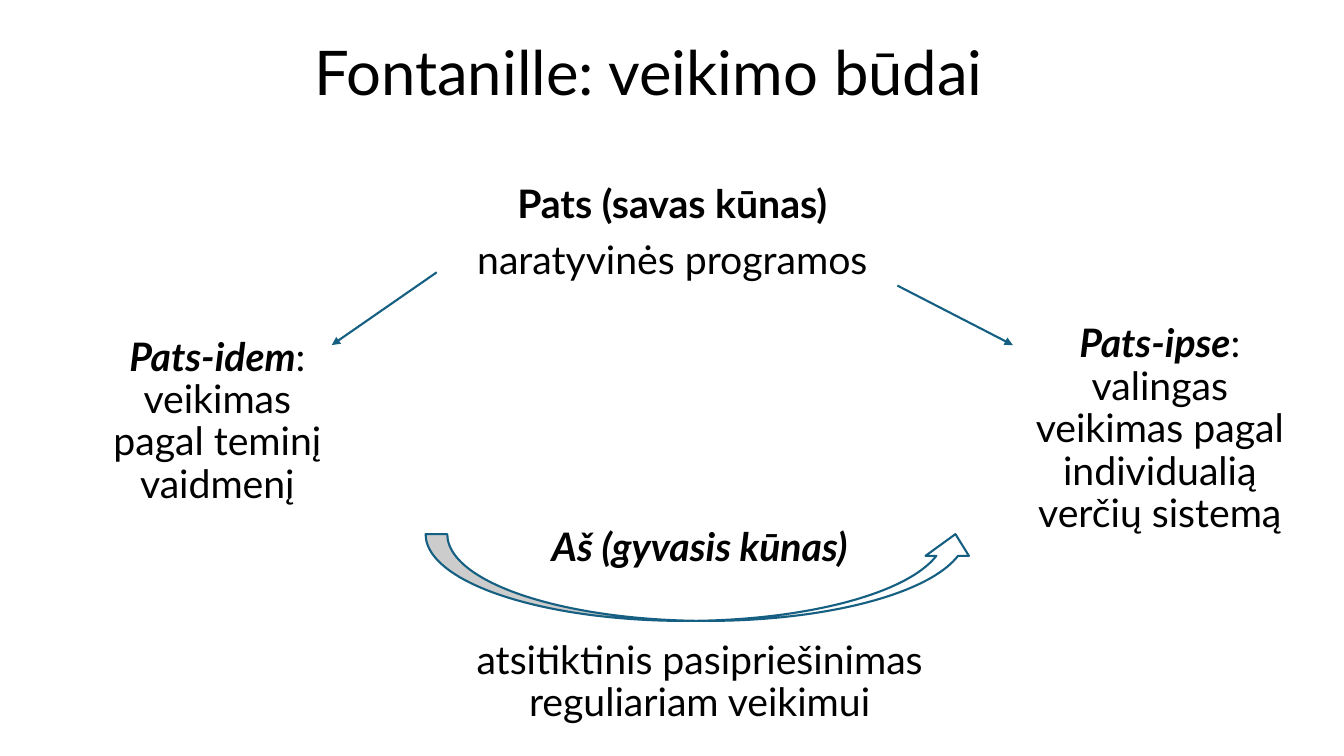
from lxml.etree import SubElement
from pptx import Presentation
from pptx.dml.color import RGBColor
from pptx.enum.shapes import MSO_CONNECTOR, MSO_SHAPE
from pptx.enum.text import MSO_ANCHOR, PP_ALIGN
from pptx.oxml.ns import qn
from pptx.util import Pt

BLACK = RGBColor(0x00, 0x00, 0x00)
WHITE = RGBColor(0xFF, 0xFF, 0xFF)
TEAL = RGBColor(0x15, 0x60, 0x82)
FONT = "Lato"
LINE_WIDTH = Pt(1.5)


def add_text_box(s, x, y, w, h, anchor=MSO_ANCHOR.TOP):
    tf = s.shapes.add_textbox(Pt(x), Pt(y), Pt(w), Pt(h)).text_frame
    tf.word_wrap = True
    tf.vertical_anchor = anchor
    return tf


def style_paragraph(p, size=28, before=10):
    p.alignment = PP_ALIGN.CENTER
    p.line_spacing = 0.9
    p.space_before = Pt(before)
    p.font.name = FONT
    p.font.size = Pt(size)
    p.font.color.rgb = BLACK


def add_title(s, text):
    tf = add_text_box(s, 49.5, 2, 828, 104.5, MSO_ANCHOR.MIDDLE)
    p = tf.paragraphs[0]
    p.text = text
    style_paragraph(p, size=44, before=0)


def add_heading_with_note(s, x, y, w, h, heading, note, italic=False, gap=10):
    tf = add_text_box(s, x, y, w, h)
    p = tf.paragraphs[0]
    p.text = heading
    style_paragraph(p)
    p.font.bold = True
    p.font.italic = italic
    p = tf.add_paragraph()
    p.text = note
    style_paragraph(p, before=gap)


def add_mode(s, x, y, w, h, term, description):
    p = add_text_box(s, x, y, w, h).paragraphs[0]
    style_paragraph(p)
    r = p.add_run()
    r.text = term
    r.font.bold = True
    r.font.italic = True
    p.add_run().text = f": {description}"


def add_arrow(s, x1, y1, x2, y2):
    c = s.shapes.add_connector(MSO_CONNECTOR.STRAIGHT, Pt(x1), Pt(y1), Pt(x2), Pt(y2))
    c.line.color.rgb = TEAL
    c.line.width = LINE_WIDTH
    SubElement(c.line._get_or_add_ln(), qn("a:tailEnd"), type="triangle")
    SubElement(c._element.spPr, qn("a:effectLst"))


def add_curved_arrow(s, x, y, w, h):
    sp = s.shapes.add_shape(MSO_SHAPE.CURVED_RIGHT_ARROW, Pt(x), Pt(y), Pt(w), Pt(h))
    sp.rotation = 270
    sp.shadow.inherit = False
    sp.fill.solid()
    sp.fill.fore_color.rgb = WHITE
    sp.line.color.rgb = TEAL
    sp.line.width = LINE_WIDTH


def main():
    prs = Presentation()
    prs.slide_width = Pt(960)
    prs.slide_height = Pt(540)
    s = prs.slides.add_slide(prs.slide_layouts[6])

    add_title(s, "Fontanille: veikimo būdai")
    add_heading_with_note(s, 304.5, 128, 351.5, 133,
                          "Pats (savas kūnas)", "naratyvinės programos")
    add_mode(s, 718, 228, 221, 232, "Pats-ipse",
             "valingas veikimas pagal individualią verčių sistemą")
    add_mode(s, 62, 237.5, 186.5, 232, "Pats-idem",
             "veikimas pagal teminį vaidmenį")
    add_arrow(s, 641, 204, 723.5, 246.5)
    add_arrow(s, 312, 194.5, 237, 246.5)
    add_heading_with_note(s, 295, 373.5, 409.5, 154, "Aš (gyvasis kūnas)",
                          "atsitiktinis pasipriešinimas reguliariam veikimui",
                          italic=True, gap=50)
    add_curved_arrow(s, 470, 215.5, 62, 394)

    prs.save("out.pptx")


if __name__ == "__main__":
    main()
